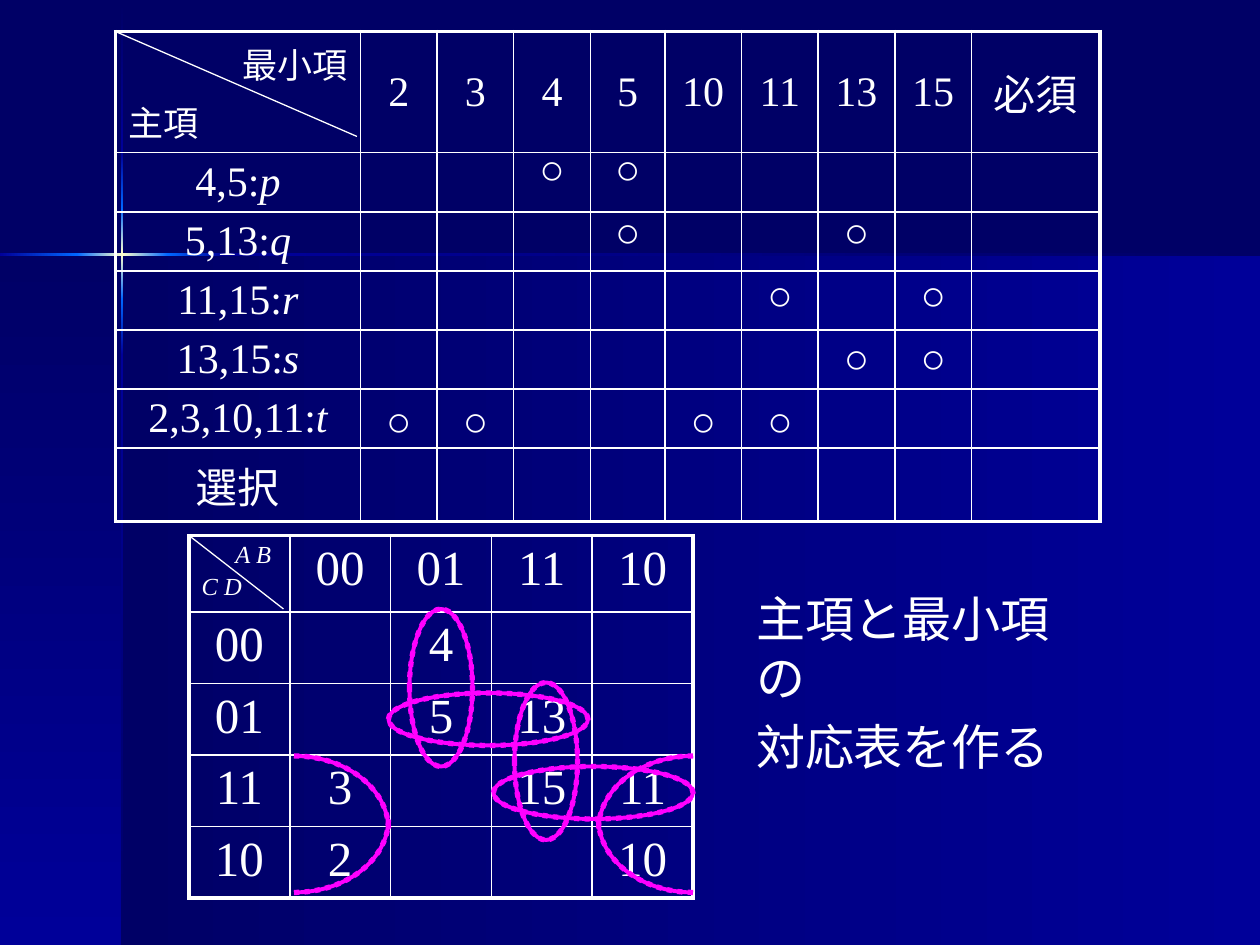
from copy import deepcopy
from dataclasses import dataclass
from itertools import accumulate, pairwise
from math import cos, pi, sin

from lxml.etree import SubElement
from pptx import Presentation
from pptx.dml.color import RGBColor
from pptx.enum.dml import MSO_LINE
from pptx.enum.shapes import MSO_CONNECTOR, MSO_SHAPE
from pptx.enum.text import MSO_ANCHOR, PP_ALIGN
from pptx.oxml.ns import qn
from pptx.util import Pt


@dataclass(frozen=True)
class Theme:
    font: str = "Times New Roman"
    ink: str = "FFFFFF"
    loop: str = "FF00FF"
    night: str = "000066"
    royal: str = "000099"
    beam: str = "0066FF"
    glow: str = "FFFFCC"
    corner: int = 14
    label: int = 20
    entry: int = 24
    large: int = 28
    frame: float = 2.25
    rule: float = 1
    diagonal: float = 0.75
    dotted: float = 3


THEME = Theme()
LEFT, CENTER, RIGHT = PP_ALIGN.LEFT, PP_ALIGN.CENTER, PP_ALIGN.RIGHT

MINTERMS = (2, 3, 4, 5, 10, 11, 13, 15)
IMPLICANTS = (
    ("p", (4, 5), (234, 348, 36, 90)),
    ("q", (5, 13), (222, 396, 114, 30)),
    ("r", (11, 15), (282, 438, 114, 30)),
    ("s", (13, 15), (294, 390, 36, 90)),
    ("t", (2, 3, 10, 11), None),
)
GRAY_CODE = ("00", "01", "11", "10")
MAP_ROWS = (("", "4", "", ""), ("", "5", "13", ""), ("3", "", "15", "11"), ("2", "", "", "10"))

CHART_LEFT, CHART_TOP = 66, 18
CHART_WIDTHS = [140] + [43.8] * 3 + [42.6] + [43.8] * 4 + [73.4]
CHART_HEIGHTS = [43.2] + [32.8] * 6
MAP_LEFT, MAP_TOP = 108, 306
MARK_TOP, MARK_STEP = 78, 36


def write(frame, *lines, size, align=(CENTER,), italic=False, anchor=MSO_ANCHOR.TOP):
    frame.word_wrap = True
    frame.vertical_anchor = anchor
    for index, line in enumerate(lines):
        paragraph = frame.paragraphs[0] if index == 0 else frame.add_paragraph()
        paragraph.alignment = align[index % len(align)]
        paragraph.space_before = Pt(size * 0.2)
        runs = ((line, italic),) if isinstance(line, str) else line
        for text, slanted in runs:
            run = paragraph.add_run()
            run.text = text
            run.font.name = THEME.font
            run.font.size = Pt(size)
            run.font.italic = slanted
            run.font.color.rgb = RGBColor.from_string(THEME.ink)


class Deck:
    def __init__(self, theme):
        self.theme = theme
        self.presentation = Presentation()
        self.presentation.slide_width, self.presentation.slide_height = Pt(720), Pt(540)
        self.slide = self.presentation.slides.add_slide(self.presentation.slide_layouts[6])
        self.slide.background.fill.solid()
        self.slide.background.fill.fore_color.rgb = RGBColor.from_string(theme.night)
        self.canvas = self.slide.shapes

    def group(self):
        self.canvas = self.slide.shapes.add_group_shape().shapes

    def ungroup(self):
        self.canvas = self.slide.shapes

    def gradient(self, box, colors, vertical):
        panel = self.canvas.add_shape(MSO_SHAPE.RECTANGLE, *map(Pt, box))
        panel.shadow.inherit = False
        panel.line.fill.background()
        panel.fill.gradient()
        panel.fill.gradient_angle = 270 if vertical else 0
        stops = panel._element.spPr.find(".//" + qn("a:gsLst"))
        if len(colors) == 3:
            stops.insert(1, deepcopy(stops[0]))
        for index, (stop, color) in enumerate(zip(panel.fill.gradient_stops, colors)):
            stop.position = index / (len(colors) - 1)
            stop.color.rgb = RGBColor.from_string(color)

    def table(self, left, top, widths, heights):
        box = map(Pt, (left, top, sum(widths), sum(heights)))
        table = self.canvas.add_table(len(heights), len(widths), *box).table
        table.first_row = table.horz_banding = False
        for column, width in zip(table.columns, widths):
            column.width = Pt(width)
        for row, height in zip(table.rows, heights):
            row.height = Pt(height)
        last_row, last_column = len(heights) - 1, len(widths) - 1
        for r in range(len(heights)):
            for c in range(len(widths)):
                outer = {"L": c == 0, "R": c == last_column, "T": r == 0, "B": r == last_row}
                self.borders(table.cell(r, c), outer)
        return table

    def borders(self, cell, outer):
        properties = cell._tc.get_or_add_tcPr()
        for side, is_frame in outer.items():
            weight = self.theme.frame if is_frame else self.theme.rule
            edge = SubElement(properties, qn(f"a:ln{side}"), w=str(Pt(weight)))
            SubElement(SubElement(edge, qn("a:solidFill")), qn("a:srgbClr"), val=self.theme.ink)
        cell.fill.background()

    def text(self, box, *lines, **style):
        write(self.canvas.add_textbox(*map(Pt, box)).text_frame, *lines, **style)

    def diagonal(self, x1, y1, x2, y2):
        line = self.canvas.add_connector(MSO_CONNECTOR.STRAIGHT, *map(Pt, (x1, y1, x2, y2)))
        line.line.color.rgb = RGBColor.from_string(self.theme.ink)
        line.line.width = Pt(self.theme.diagonal)
        SubElement(line._element.spPr, qn("a:effectLst"))

    def outline(self, shape, dotted):
        shape.shadow.inherit = False
        shape.fill.background()
        shape.line.color.rgb = RGBColor.from_string(self.theme.loop)
        shape.line.width = Pt(self.theme.dotted if dotted else self.theme.frame)
        if dotted:
            shape.line.dash_style = MSO_LINE.ROUND_DOT

    def ellipse(self, box, dotted):
        self.outline(self.canvas.add_shape(MSO_SHAPE.OVAL, *map(Pt, box)), dotted)

    def quarter_arc(self, x, y, dx, dy, dotted):
        angles = [step * pi / 48 for step in range(25)]
        points = [(Pt(x + dx * sin(a)), Pt(y + dy * (1 - cos(a)))) for a in angles]
        builder = self.canvas.build_freeform(*points[0])
        builder.add_line_segments(points[1:], close=False)
        self.outline(builder.convert_to_shape(), dotted)

    def loop(self, box, dotted):
        if box:
            self.ellipse(box, dotted)
            return
        for x, dx in ((168, 54), (396, -54)):
            for y, dy in ((432, 42), (510, -42)):
                self.quarter_arc(x, y, dx, dy, dotted)


def draw_backdrop(deck):
    night, royal, beam, glow = THEME.night, THEME.royal, THEME.beam, THEME.glow
    deck.gradient((70, 145.5, 650, 394.5), (night, royal), False)
    deck.gradient((0, 145.5, 70, 394.5), (night, royal), True)
    phases = ((night, royal), (royal, beam), (beam, glow, beam), (beam, royal), (royal, night))
    for (start, end), colors in zip(pairwise((1, 87, 119, 171, 203, 540)), phases):
        deck.gradient((69.1, start, 1.4, end - start), colors, True)
    for (start, end), colors in zip(pairwise((0, 44, 96, 127.5, 720)), phases[1:]):
        deck.gradient((start, 144.7, end - start, 1.4), colors, False)


def draw_cover_chart(deck):
    chart = deck.table(CHART_LEFT, CHART_TOP, CHART_WIDTHS, CHART_HEIGHTS)
    write(chart.cell(0, 0).text_frame, "最小項", "主項", size=THEME.label, align=(RIGHT, LEFT))
    for column, heading in enumerate((*map(str, MINTERMS), "必須"), 1):
        cell = chart.cell(0, column)
        write(cell.text_frame, heading, size=THEME.entry)
        cell.vertical_anchor = MSO_ANCHOR.MIDDLE
    for row, (name, covered, _) in enumerate(IMPLICANTS, 1):
        label = ((",".join(map(str, covered)) + ":", False), (name, True))
        write(chart.cell(row, 0).text_frame, label, size=THEME.entry)
    write(chart.cell(6, 0).text_frame, "選択", size=THEME.entry)


def draw_karnaugh_map(deck):
    grid = deck.table(MAP_LEFT, MAP_TOP, [57.6] * 5, [43.6] + [40.9] * 4)
    write(grid.cell(0, 0).text_frame, "A B ", "C D", size=THEME.corner,
          align=(RIGHT, LEFT), italic=True)
    rows = (GRAY_CODE, *MAP_ROWS)
    for r, values in enumerate(rows):
        entries = values if r == 0 else (GRAY_CODE[r - 1], *values)
        for c, value in enumerate(entries, 1 if r == 0 else 0):
            if value:
                write(grid.cell(r, c).text_frame, value, size=THEME.large)


def draw_marks(deck):
    edges = list(accumulate(CHART_WIDTHS, initial=CHART_LEFT))
    for row, (_, covered, box) in enumerate(IMPLICANTS):
        deck.group()
        for minterm in covered:
            column = MINTERMS.index(minterm) + 1
            mark = (edges[column], MARK_TOP + row * MARK_STEP, CHART_WIDTHS[column], MARK_STEP)
            deck.text(mark, "○", size=THEME.entry)
        deck.loop(box, dotted=False)
    deck.ungroup()


def main():
    deck = Deck(THEME)
    draw_backdrop(deck)
    draw_cover_chart(deck)
    draw_karnaugh_map(deck)
    for _, _, box in IMPLICANTS:
        deck.loop(box, dotted=True)
    deck.diagonal(MAP_LEFT, MAP_TOP, 162, 348)
    deck.diagonal(CHART_LEFT, CHART_TOP, 204, 78)
    draw_marks(deck)
    deck.text((425, 333, 204, 81), "主項と最小項の", "対応表を作る", size=THEME.large, align=(LEFT,))
    deck.presentation.save("out.pptx")


if __name__ == "__main__":
    main()
